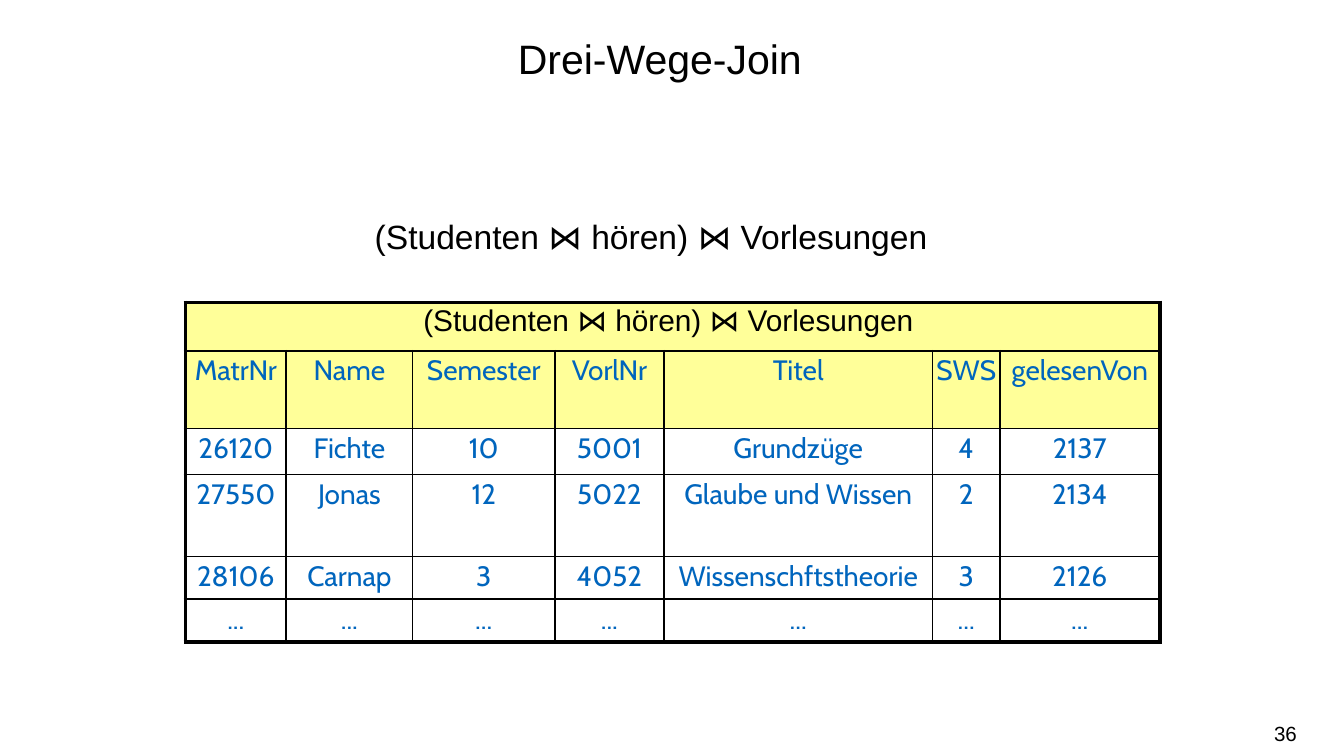
from collections import namedtuple
from dataclasses import dataclass

from lxml.etree import SubElement
from pptx import Presentation
from pptx.dml.color import RGBColor
from pptx.enum.text import MSO_ANCHOR as Anchor, PP_ALIGN as Align
from pptx.oxml.ns import qn
from pptx.util import Inches, Pt

Box = namedtuple("Box", "left top width height")


@dataclass(frozen=True)
class Theme:
    """Colours, fonts, type sizes and line widths of the slide."""
    ink: str = "000000"
    blue: str = "0065BD"
    yellow: str = "FFFF99"
    white: str = "FFFFFF"
    sans: str = "Arial"
    table_font: str = "Cabin"
    title: float = 22
    formula: float = 18
    caption: float = 16
    cell: float = 15
    number: float = 11
    thin: float = 1
    thick: float = 2.25


THEME = Theme()
SLIDE_WIDTH = 10
SLIDE_HEIGHT = SLIDE_WIDTH * 9 / 16
JOIN = "(Studenten ⋈ hören) ⋈ Vorlesungen"
COLUMN_WIDTHS = [0.75, 0.94, 1.06, 0.81, 2, 0.5, 1.19]
ROW_HEIGHTS = [0.36, 0.58, 0.34, 0.61, 0.32, 0.32]
COLUMN_COUNT = len(COLUMN_WIDTHS)
ROWS = [
    [JOIN + " "],
    ["MatrNr", "Name", "Semester", "VorlNr", "Titel", "SWS", "gelesenVon"],
    ["26120", "Fichte", "10", "5001", "Grundzüge", "4", "2137"],
    ["27550", "Jonas", "12", "5022", "Glaube und Wissen", "2", "2134"],
    ["28106", "Carnap", "3", "4052", "Wissenschftstheorie", "3", "2126"],
    ["..."] * COLUMN_COUNT,
]


def write(para, text, size, align, font=THEME.sans, color=THEME.ink):
    """Add one formatted run to a paragraph and align it."""
    para.alignment = align
    span = para.add_run()
    span.text = text
    span.font.size = Pt(size)
    span.font.name = font
    span.font.color.rgb = RGBColor.from_string(color)


def add_text(page, box, text, size, align, anchor=Anchor.TOP, side_inset=0.1):
    """Place a wrapped text box and return its paragraph."""
    frame = page.shapes.add_textbox(*map(Inches, box)).text_frame
    frame.word_wrap = True
    frame.vertical_anchor = anchor
    frame.margin_left = frame.margin_right = Inches(side_inset)
    para = frame.paragraphs[0]
    write(para, text, size, align)
    return para


def add_border(cell, side, width):
    """Draw one solid edge of a table cell."""
    line = SubElement(cell._tc.get_or_add_tcPr(), qn(f"a:ln{side}"), w=str(Pt(width)))
    fill = SubElement(line, qn("a:solidFill"))
    SubElement(fill, qn("a:srgbClr"), val=THEME.ink)


def style_cell(cell, row, column):
    """Set the insets, edges and fill of a cell from its grid position."""
    cell.margin_left = cell.margin_right = 0
    cell.margin_top = cell.margin_bottom = Inches(0.04)
    outer = {
        "L": column == 0,
        "R": row == 0 or column == COLUMN_COUNT - 1,
        "T": row == 0,
        "B": row == len(ROWS) - 1,
    }
    for side, is_outer in outer.items():
        add_border(cell, side, THEME.thick if is_outer else THEME.thin)
    cell.fill.solid()
    cell.fill.fore_color.rgb = RGBColor.from_string(THEME.yellow if row < 2 else THEME.white)


def add_join_table(page, box):
    """Place the result table with its merged caption row."""
    table = page.shapes.add_table(len(ROWS), COLUMN_COUNT, *map(Inches, box)).table
    for column, width in zip(table.columns, COLUMN_WIDTHS):
        column.width = Inches(width)
    for row, height in zip(table.rows, ROW_HEIGHTS):
        row.height = Inches(height)
    table.cell(0, 0).merge(table.cell(0, COLUMN_COUNT - 1))
    for row, texts in enumerate(ROWS):
        for column in range(COLUMN_COUNT):
            style_cell(table.cell(row, column), row, column)
        for column, text in enumerate(texts):
            para = table.cell(row, column).text_frame.paragraphs[0]
            para.line_spacing = 0.9
            if row == 0:
                write(para, text, THEME.caption, Align.CENTER)
            else:
                write(para, text, THEME.cell, Align.CENTER, THEME.table_font, THEME.blue)


def add_join_slide(deck):
    """Build the three-way join slide."""
    page = deck.slides.add_slide(deck.slide_layouts[6])
    title = add_text(page, Box(1.16, 0.11, 7.5, 0.94), "Drei-Wege-Join", THEME.title, Align.CENTER)
    title.line_spacing = 1.25
    add_text(page, Box(2.69, 1.56, 4.44, 0.4), JOIN, THEME.formula, Align.LEFT)
    add_join_table(page, Box(1.38, 2.25, sum(COLUMN_WIDTHS), sum(ROW_HEIGHTS)))
    add_text(page, Box(7.41, 5.31, 2.24, 0.3), "36", THEME.number, Align.RIGHT, Anchor.MIDDLE, 0)


def main():
    """Create the deck and save it."""
    deck = Presentation()
    deck.slide_width, deck.slide_height = Inches(SLIDE_WIDTH), Inches(SLIDE_HEIGHT)
    add_join_slide(deck)
    deck.save("out.pptx")


if __name__ == "__main__":
    main()
